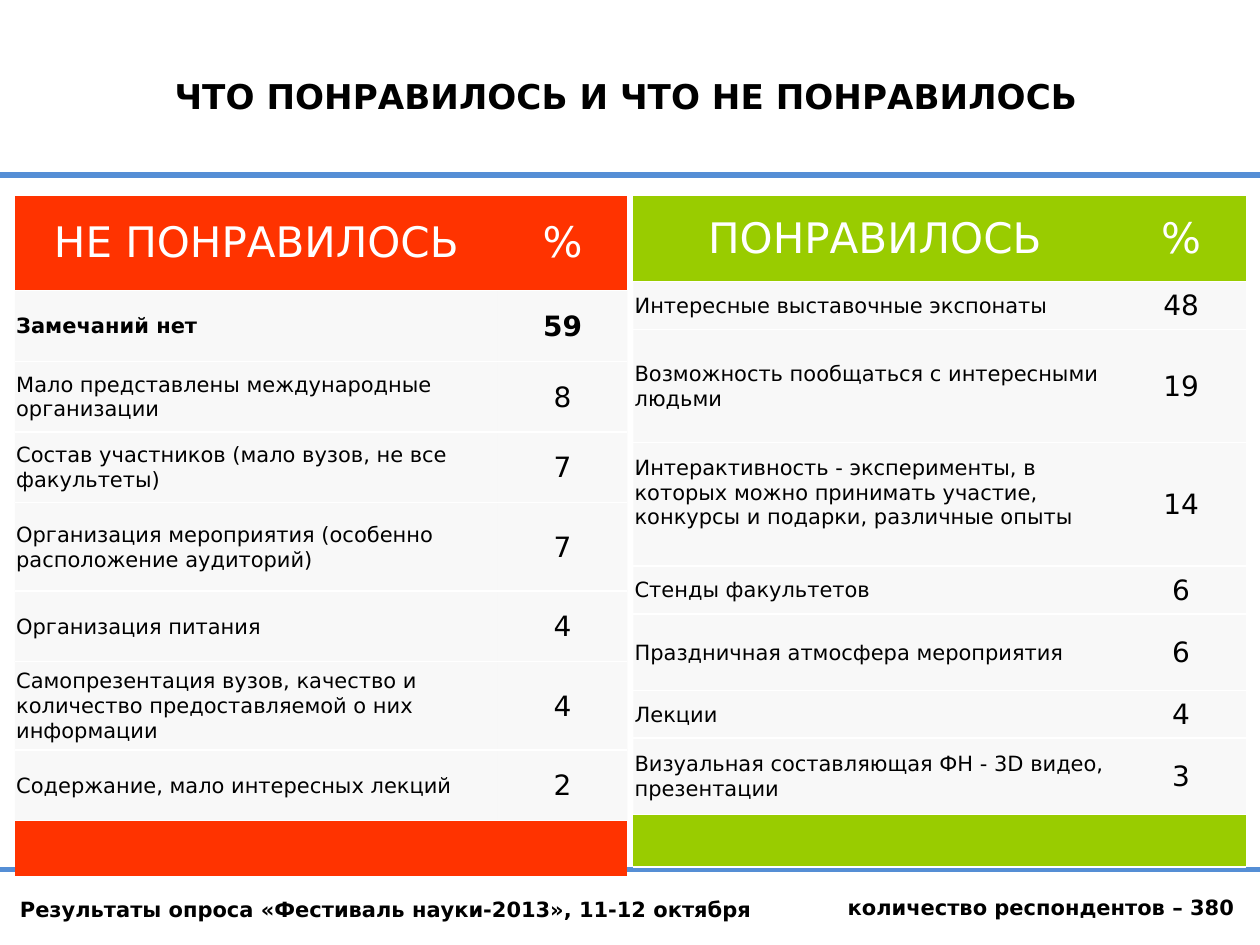
"""Build the slide comparing what survey visitors liked and disliked."""
from dataclasses import dataclass

from lxml.etree import SubElement
from pptx import Presentation
from pptx.dml.color import RGBColor
from pptx.enum.shapes import MSO_CONNECTOR
from pptx.enum.text import MSO_ANCHOR, PP_ALIGN
from pptx.oxml import parse_xml
from pptx.oxml.ns import nsdecls, qn
from pptx.util import Pt

FONT = "DejaVu Sans"
BLACK, WHITE, BLUE, GREY = "000000", "FFFFFF", "558ED5", "F2F2F2"
RED, GREEN = "FF3300", "99CC00"
NO_STYLE = "{2D5ABB26-0587-4C30-8999-92F81FD0307C}"


@dataclass
class Answer:
    text: str
    percent: int
    height: float
    bold: bool = False
    bottom: float = 0


@dataclass
class Ranking:
    heading: str
    color: str
    left: float
    text_width: float
    header_height: float
    footer_height: float
    answers: list[Answer]


@dataclass
class Caption:
    text: str
    left: float
    top: float
    width: float


RANKINGS = [
    Ranking("НЕ ПОНРАВИЛОСЬ", RED, 8.5, 276, 54.5, 32.2, [
        Answer("Замечаний нет", 59, 40.4, bold=True),
        Answer("Мало представлены международные организации", 8, 40.4),
        Answer("Состав участников (мало вузов, не все факультеты)", 7, 40.4),
        Answer("Организация мероприятия (особенно расположение аудиторий)", 7, 50.4),
        Answer("Организация питания", 4, 40.4),
        Answer("Самопрезентация вузов, качество и количество "
               "предоставляемой о них информации", 4, 50.4),
        Answer("Содержание, мало интересных лекций", 2, 40.4),
    ]),
    Ranking("ПОНРАВИЛОСЬ", GREEN, 361.9, 276, 49.4, 30, [
        Answer("Интересные выставочные экспонаты", 48, 27.2),
        Answer("Возможность пообщаться с интересными людьми", 19, 64.8),
        Answer("Интерактивность - эксперименты, в которых можно принимать участие, "
               "конкурсы и подарки, различные опыты", 14, 70.6, bottom=14),
        Answer("Стенды факультетов", 6, 27.2),
        Answer("Праздничная атмосфера мероприятия", 6, 43.8),
        Answer("Лекции", 4, 27.2),
        Answer("Визуальная составляющая ФН - 3D видео, презентации", 3, 43.8),
    ]),
]
CAPTIONS = [
    Caption("Результаты опроса «Фестиваль науки-2013», 11-12 октября", 0, 509, 462),
    Caption("количество респондентов – 380", 473, 507.6, 247),
]


def rgb(color: str) -> RGBColor:
    return RGBColor.from_string(color)


def write(frame, text: str, size: float, color: str, bold=False, align=PP_ALIGN.LEFT) -> None:
    frame.text = text
    para = frame.paragraphs[0]
    para.alignment = align
    for span in para.runs:
        span.font.name = FONT
        span.font.size = Pt(size)
        span.font.bold = bold
        span.font.color.rgb = rgb(color)


def paint_cell(cell, color: str, opacity: int = 100) -> None:
    cell.fill.solid()
    cell.fill.fore_color.rgb = rgb(color)
    properties = cell._tc.get_or_add_tcPr()
    if opacity < 100:
        shade = properties.find(".//" + qn("a:srgbClr"))
        SubElement(shade, qn("a:alpha")).set("val", str(opacity * 1000))
    for position, side in enumerate(("lnT", "lnB")):
        border = parse_xml(
            f'<a:{side} {nsdecls("a")} w="{Pt(1)}"><a:solidFill>'
            f'<a:srgbClr val="{WHITE}"/></a:solidFill></a:{side}>')
        properties.insert(position, border)


def set_margins(cell, margin: float, bottom: float) -> None:
    cell.vertical_anchor = MSO_ANCHOR.MIDDLE
    cell.margin_left = cell.margin_right = cell.margin_top = Pt(margin)
    cell.margin_bottom = Pt(bottom)


def add_ranking(page, ranking: Ranking) -> None:
    heights = [ranking.header_height, *(a.height for a in ranking.answers), ranking.footer_height]
    widths = [ranking.text_width, 350 - ranking.text_width]
    table = page.shapes.add_table(
        len(heights), 2, Pt(ranking.left), Pt(111.6), Pt(sum(widths)), Pt(sum(heights))).table
    table.first_row = table.horz_banding = False
    table._tbl.tblPr.find(qn("a:tableStyleId")).text = NO_STYLE
    for row, height in zip(table.rows, heights):
        row.height = Pt(height)
    for column, width in zip(table.columns, widths):
        column.width = Pt(width)

    for column, text in enumerate((ranking.heading, "%")):
        cell = table.cell(0, column)
        set_margins(cell, 1.5, 1.5)
        write(cell.text_frame, text, 24, WHITE, align=PP_ALIGN.CENTER)
        paint_cell(cell, ranking.color)
        paint_cell(table.cell(len(heights) - 1, column), ranking.color)
    table.cell(len(heights) - 1, 0).merge(table.cell(len(heights) - 1, 1))

    for row, answer in enumerate(ranking.answers, start=1):
        label, value = table.cell(row, 0), table.cell(row, 1)
        set_margins(label, 0.75, answer.bottom)
        set_margins(value, 0.75, 0)
        write(label.text_frame, answer.text, 12, BLACK, answer.bold)
        write(value.text_frame, str(answer.percent), 16, BLACK, answer.bold, PP_ALIGN.CENTER)
        paint_cell(label, GREY, 50)
        paint_cell(value, GREY, 50)


def add_rule(page, top: float) -> None:
    rule = page.shapes.add_connector(MSO_CONNECTOR.STRAIGHT, 0, Pt(top), Pt(720), Pt(top))
    rule.line.color.rgb = rgb(BLUE)
    rule.line.width = Pt(3)
    SubElement(rule._element.spPr, qn("a:effectLst"))


def add_caption(page, caption: Caption) -> None:
    box = page.shapes.add_textbox(
        Pt(caption.left), Pt(caption.top), Pt(caption.width), Pt(21.6))
    box.text_frame.word_wrap = True
    box.text_frame.margin_left = Pt(11.4)
    write(box.text_frame, caption.text, 12, BLACK, bold=True)


def add_title(page, text: str) -> None:
    title = page.shapes.title
    title.left, title.top, title.width, title.height = Pt(-3.6), Pt(10), Pt(723), Pt(90)
    title.text_frame.vertical_anchor = MSO_ANCHOR.MIDDLE
    write(title.text_frame, text, 19.5, BLACK, True, PP_ALIGN.CENTER)


def main() -> None:
    deck = Presentation()
    deck.slide_width, deck.slide_height = Pt(720), Pt(540)
    page = deck.slides.add_slide(deck.slide_layouts[5])
    add_title(page, "ЧТО ПОНРАВИЛОСЬ И ЧТО НЕ ПОНРАВИЛОСЬ")
    for top in (100, 496.8):
        add_rule(page, top)
    for caption in CAPTIONS:
        add_caption(page, caption)
    for ranking in RANKINGS:
        add_ranking(page, ranking)
    deck.save("out.pptx")


if __name__ == "__main__":
    main()
